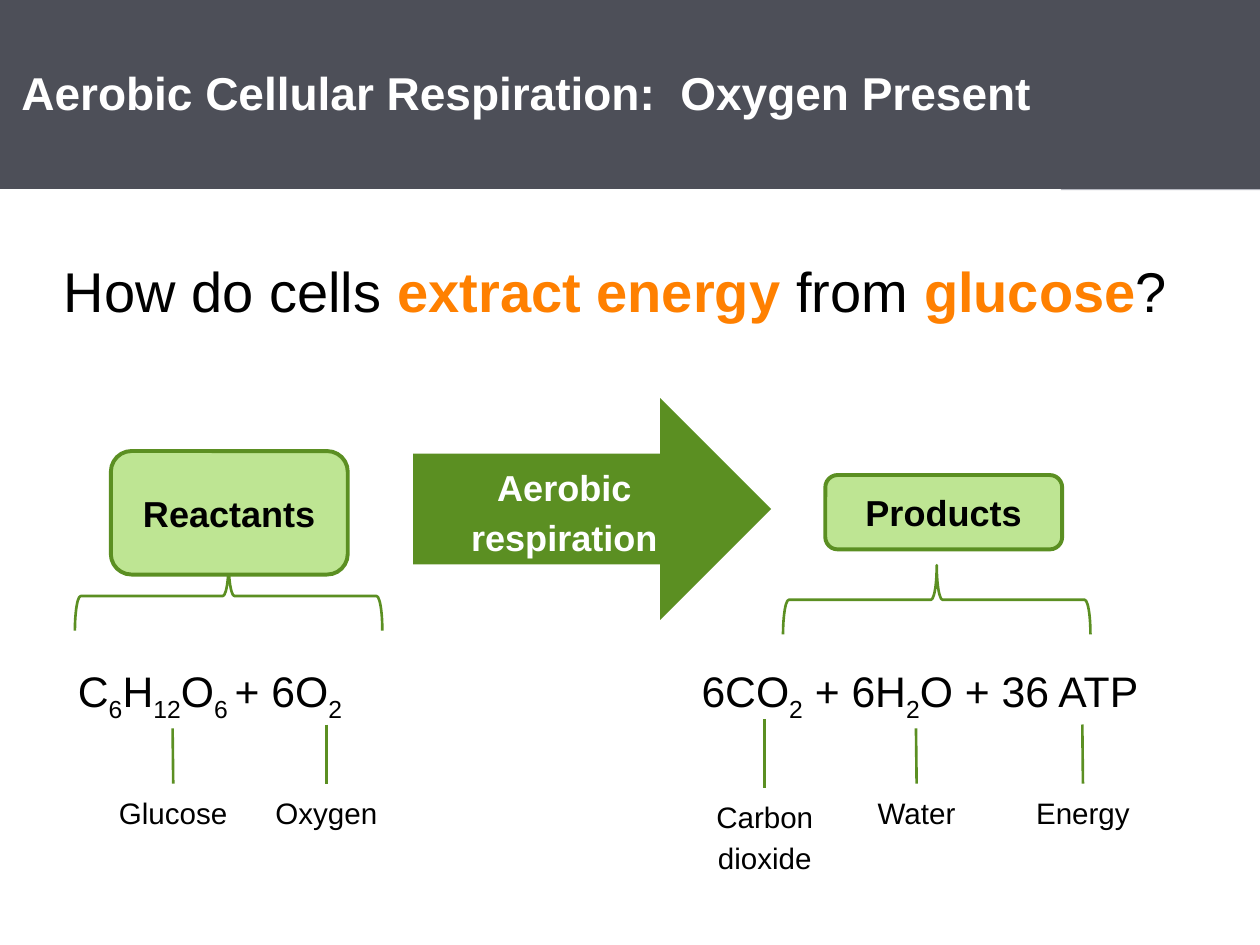
"""Build the slide on aerobic cellular respiration."""
from lxml import etree
from pptx import Presentation
from pptx import util as u
from pptx.dml.color import RGBColor
from pptx.enum import shapes, text
from pptx.oxml.ns import qn

In = u.Inches
COLORS = {"slate": "4D4F58", "gray": "B5B7BF", "green": "5B8F22", "lime": "BEE593",
          "orange": "FF8000", "black": "000000", "white": "FFFFFF"}
CENTER, LEFT = text.PP_ALIGN.CENTER, text.PP_ALIGN.LEFT
GROW, FIXED = text.MSO_AUTO_SIZE.SHAPE_TO_FIT_TEXT, text.MSO_AUTO_SIZE.NONE
MIDDLE, TOP = text.MSO_ANCHOR.MIDDLE, text.MSO_ANCHOR.TOP
SHAPE = shapes.MSO_SHAPE


def write(sp, runs, size, align=LEFT, spacing=1.15, before=0.2, **frame):
    """Fill one paragraph with (text, color, bold, subscript) runs."""
    tf = sp.text_frame
    for name, value in {"word_wrap": True, "auto_size": GROW, **frame}.items():
        setattr(tf, name, value)
    p = tf.paragraphs[0]
    for name, value in {"alignment": align, "line_spacing": spacing,
                        "space_before": u.Pt(size * before)}.items():
        setattr(p, name, value)
    for words, color, bold, sub in runs:
        r = p.add_run()
        r.text = words
        for name, value in {"name": "Arial", "size": u.Pt(size), "bold": bold}.items():
            setattr(r.font, name, value)
        r.font.color.rgb = RGBColor.from_string(COLORS[color])
        if sub:
            r.font._element.set("baseline", "-25000")


def draw(kind, box, fill=None, line=None):
    """Add a preset shape; line is a width in points."""
    sp = s.shapes.add_shape(kind, *map(In, box))
    sp.shadow.inherit = False
    if fill:
        sp.fill.solid()
        sp.fill.fore_color.rgb = RGBColor.from_string(COLORS[fill])
    else:
        sp.fill.background()
    if line:
        sp.line.color.rgb = RGBColor.from_string(COLORS["green"])
        sp.line.width = u.Pt(line)
    else:
        sp.line.fill.background()
    return sp


prs = Presentation()
prs.slide_width, prs.slide_height = In(10), In(7.5)
s = prs.slides.add_slide(prs.slide_layouts[5])

corner = draw(SHAPE.RECTANGLE, (8.42, 0, 1.58, 1.51), "gray")
s.shapes._spTree.insert(2, corner._element)

title = s.shapes.title
for name, value in {"left": 0, "top": 0, "width": 10, "height": 1.5}.items():
    setattr(title, name, In(value))
title.fill.solid()
title.fill.fore_color.rgb = RGBColor.from_string(COLORS["slate"])
write(title, [("Aerobic Cellular Respiration:  Oxygen Present", "white", True, False)], 26.3,
      spacing=0.95, before=0, auto_size=FIXED, vertical_anchor=MIDDLE,
      margin_left=In(0.17), margin_right=In(0.19), margin_top=In(0.07), margin_bottom=In(0.07))

arrow = draw(SHAPE.RIGHT_ARROW, (3.28, 3.16, 2.84, 1.76), "green")
write(arrow, [("Aerobic respiration", "white", True, False)], 20.6, CENTER,
      auto_size=FIXED, vertical_anchor=MIDDLE)

for left, top in ((1.54, 3.51), (7.16, 3.54)):
    brace = draw(SHAPE.RIGHT_BRACE, (left, top, 0.55, 2.44), line=1.5)
    brace.rotation = 270

formulas = [
    (0.52, 2.41, ["C", "6", "H", "12", "O", "6 ", "+ 6O", "2"]),
    (5.47, 3.74, ["6CO", "2", " + 6H", "2", "O + 36 ATP"]),
]
for left, width, parts in formulas:
    sp = s.shapes.add_textbox(In(left), In(5.16), In(width), In(0.57))
    write(sp, [(part, "black", False, i % 2 == 1) for i, part in enumerate(parts)], 24.4,
          word_wrap=False)

labels = [
    ("Glucose", (0.84, 6.22, 1.07, 0.43), False, 1.37, 5.78),
    ("Oxygen", (2.08, 6.22, 1.02, 0.43), False, 2.59, 5.75),
    ("Carbon dioxide", (5.47, 6.25, 1.2, 0.75), True, 6.07, 5.71),
    ("Water", (6.86, 6.22, 0.83, 0.43), False, 7.27, 5.78),
    ("Energy", (8.12, 6.22, 0.95, 0.43), False, 8.59, 5.75),
]
for words, box, wrap, x, y in labels:
    sp = s.shapes.add_textbox(*map(In, box))
    write(sp, [(words, "black", False, False)], 16.9, CENTER, word_wrap=wrap)
    line = s.shapes.add_connector(shapes.MSO_CONNECTOR.STRAIGHT, In(x), In(y), In(x), In(box[1]))
    line.end_connect(sp, 0)
    line.line.color.rgb = RGBColor.from_string(COLORS["green"])
    line.line.width = u.Pt(1.5)
    etree.SubElement(line._element.spPr, qn("a:effectLst"))

for words, box in (("Products", (6.55, 3.77, 1.88, 0.59)), ("Reactants", (0.88, 3.58, 1.88, 0.98))):
    sp = draw(SHAPE.ROUNDED_RECTANGLE, box, "lime", 2.25)
    write(sp, [(words, "black", True, False)], 20.6, CENTER, spacing=1.0, before=0,
          vertical_anchor=MIDDLE, margin_left=In(0.19), margin_right=In(0.19),
          margin_top=In(0.09), margin_bottom=In(0.09))

question = s.shapes.add_textbox(In(0.41), In(1.99), In(9.53), In(0.64))
write(question, [("How do cells ", "black", False, False), ("extract energy ", "orange", True, False),
                 ("from ", "black", False, False), ("glucose", "orange", True, False),
                 ("?", "black", False, False)], 32, spacing=1.0, before=0, vertical_anchor=TOP)

prs.save("out.pptx")
